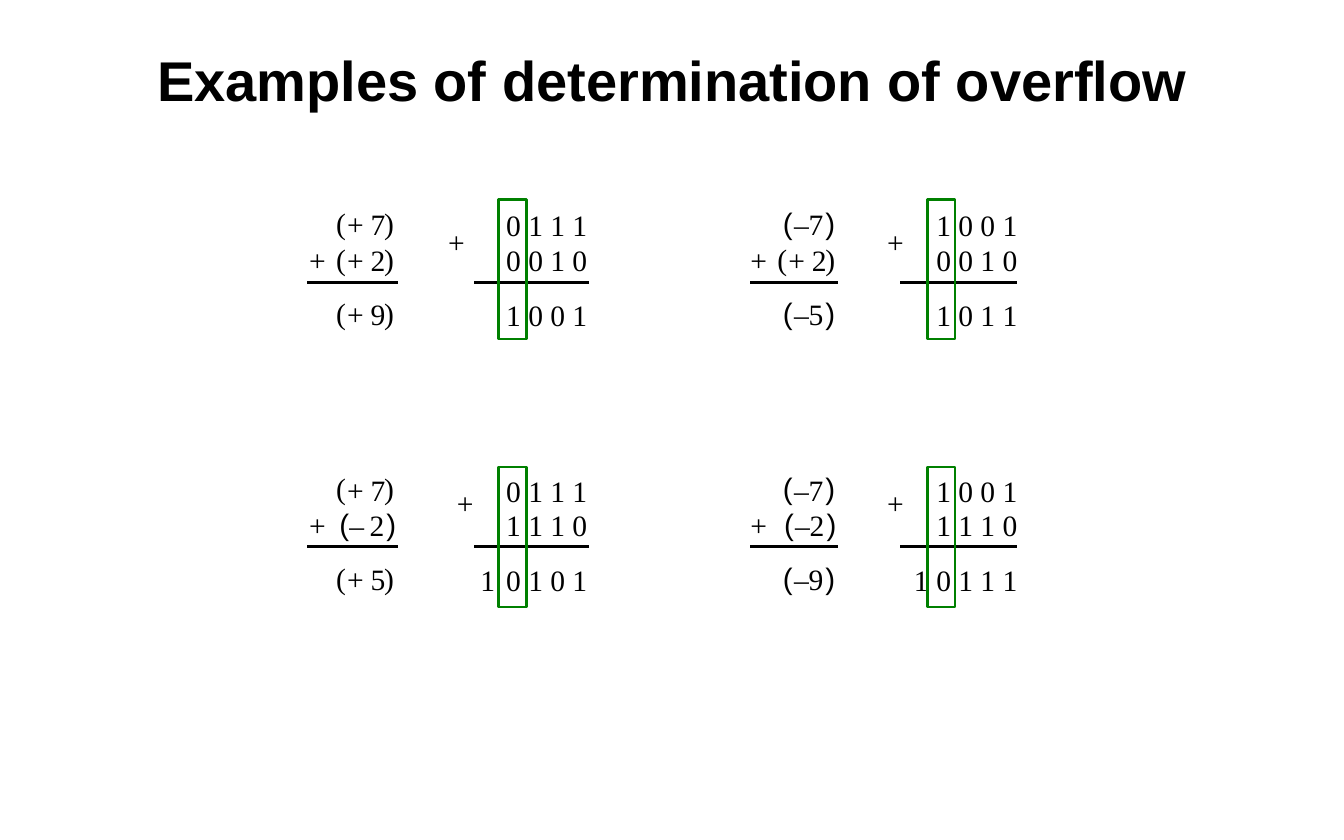
from dataclasses import dataclass

from lxml import etree
from pptx import Presentation
from pptx.dml.color import RGBColor
from pptx.enum.shapes import MSO_CONNECTOR, MSO_SHAPE
from pptx.enum.text import MSO_ANCHOR, MSO_AUTO_SIZE, PP_ALIGN
from pptx.oxml.ns import qn
from pptx.util import Inches, Pt

STRAIGHT = MSO_CONNECTOR.STRAIGHT
RECTANGLE = MSO_SHAPE.RECTANGLE
MIDDLE = MSO_ANCHOR.MIDDLE
NO_FIT = MSO_AUTO_SIZE.NONE
GROW = MSO_AUTO_SIZE.SHAPE_TO_FIT_TEXT
CENTER = PP_ALIGN.CENTER


@dataclass(frozen=True)
class Theme:
    """Colours, fonts and sizes of the slide."""
    ink: RGBColor = RGBColor(0, 0, 0)
    highlight: RGBColor = RGBColor(0, 0x80, 0)
    sans: str = "Arial"
    serif: str = "Times New Roman"
    title_size: float = 36
    number_size: float = 19
    rule_width: float = 1.88
    box_width: float = 1.5


@dataclass(frozen=True)
class Column:
    """Horizontal places shared by the examples of one column."""
    operator: float
    decimal_rule: tuple
    binary_rule: tuple
    carry: float
    box: float
    bits: float


@dataclass(frozen=True)
class Row:
    """Vertical places shared by the examples of one row."""
    decimals: tuple
    bits: tuple
    plus: float
    rule: float
    box: float


@dataclass(frozen=True)
class Example:
    """One addition, with each decimal given as text and left edge."""
    column: Column
    row: Row
    plus: float
    decimals: tuple
    bits: tuple
    carry: str = ""


THEME = Theme()
GLYPH_WIDTHS = {"+": 0.15, "(": 0.09, ")": 0.09}
DIGIT_WIDTH, BITS_WIDTH, TEXT_HEIGHT = 0.13, 0.73, 0.32
BOX_SIZE = (0.25, 1.25)
GLYPH_OFFSETS = {
    "+ ": (0, 0.1, 0.31, 0.43),
    "–": (0, 0.1, 0.23, 0.38),
    "– ": (0, 0.09, 0.27, 0.42),
}
LEFT = Column(2.76, (2.74, 3.55), (4.23, 5.26), 4.29, 4.45, 4.52)
RIGHT = Column(6.7, (6.7, 7.48), (8.04, 9.08), 8.16, 8.28, 8.36)
UPPER = Row((1.84, 2.16, 2.64), (1.85, 2.16, 2.65), 2.0, 2.52, 1.78)
LOWER = Row((4.21, 4.53, 5.01), (4.22, 4.53, 5.02), 4.33, 4.88, 4.17)
EXAMPLES = (
    Example(LEFT, UPPER, 4.0, (("+ 7", 3.0), ("+ 2", 3.0), ("+ 9", 3.0)),
            ("0 1 1 1", "0 0 1 0", "1 0 0 1")),
    Example(RIGHT, UPPER, 7.92, (("–7", 6.99), ("+ 2", 6.94), ("–5", 6.99)),
            ("1 0 0 1", "0 0 1 0", "1 0 1 1")),
    Example(LEFT, LOWER, 4.08, (("+ 7", 3.0), ("– 2", 3.03), ("+ 5", 3.0)),
            ("0 1 1 1", "1 1 1 0", "0 1 0 1"), "1"),
    Example(RIGHT, LOWER, 7.92, (("–7", 6.99), ("–2", 7.0), ("–9", 6.99)),
            ("1 0 0 1", "1 1 1 0", "0 1 1 1"), "1"),
)


def write_text(frame, text, *, size, font, bold=False, align=None):
    """Fill a text frame with one formatted paragraph."""
    paragraph = frame.paragraphs[0]
    paragraph.alignment = align
    run = paragraph.add_run()
    run.text = text
    run.font.size = Pt(size)
    run.font.name = font
    run.font.bold = bold
    run.font.color.rgb = THEME.ink


def add_title(slide, text):
    """Place and format the slide title."""
    title = slide.shapes.title
    title.left, title.top = Inches(1), Inches(0.33)
    title.width, title.height = Inches(10), Inches(0.75)
    title.text_frame.vertical_anchor = MIDDLE
    title.text_frame.auto_size = NO_FIT
    write_text(title.text_frame, text, size=THEME.title_size,
               font=THEME.sans, bold=True, align=CENTER)


def add_label(slide, text, left, top, width=None, font=THEME.serif):
    """Add a tight text box holding a symbol or a row of bits."""
    width = width or GLYPH_WIDTHS.get(text, DIGIT_WIDTH)
    label = slide.shapes.add_textbox(
        Inches(left), Inches(top), Inches(width), Inches(TEXT_HEIGHT))
    frame = label.text_frame
    frame.margin_left = frame.margin_right = 0
    frame.margin_top = frame.margin_bottom = 0
    frame.word_wrap = False
    frame.auto_size = GROW
    write_text(frame, text, size=THEME.number_size, font=font)


def add_decimal(slide, text, left, top):
    """Add a signed digit in parentheses, one label per symbol."""
    spacing, digit = text[:-1], text[-1]
    sign = spacing.strip()
    parenthesis_font = THEME.serif if sign == "+" else THEME.sans
    for symbol, offset in zip(("(", sign, digit, ")"), GLYPH_OFFSETS[spacing]):
        if symbol in "()":
            add_label(slide, symbol, left + offset, top - 0.01,
                      font=parenthesis_font)
        else:
            add_label(slide, symbol, left + offset, top)


def add_rule(slide, span, top):
    """Add the horizontal line above a sum."""
    start, end = span
    rule = slide.shapes.add_connector(
        STRAIGHT, Inches(end), Inches(top), Inches(start), Inches(top))
    rule.line.color.rgb = THEME.ink
    rule.line.width = Pt(THEME.rule_width)
    etree.SubElement(rule._element.spPr, qn("a:effectLst"))


def add_sign_box(slide, left, top):
    """Outline the column of sign bits."""
    width, height = BOX_SIZE
    box = slide.shapes.add_shape(
        RECTANGLE, Inches(left), Inches(top), Inches(width), Inches(height))
    box.shadow.inherit = False
    box.fill.background()
    box.line.color.rgb = THEME.highlight
    box.line.width = Pt(THEME.box_width)


def add_example(slide, example):
    """Add one addition in decimal and binary form."""
    column, row = example.column, example.row
    for (text, left), top in zip(example.decimals, row.decimals):
        add_decimal(slide, text, left, top)
    for bits, top in zip(example.bits, row.bits):
        add_label(slide, bits, column.bits, top, BITS_WIDTH)
    add_label(slide, "+", column.operator, row.decimals[1])
    add_label(slide, "+", example.plus, row.plus)
    if example.carry:
        add_label(slide, example.carry, column.carry, row.bits[-1])
    for span in (column.decimal_rule, column.binary_rule):
        add_rule(slide, span, row.rule)
    add_sign_box(slide, column.box, row.box)


def main():
    """Build and save the slide."""
    presentation = Presentation()
    presentation.slide_width = Inches(12)
    presentation.slide_height = Inches(7.5)
    slide = presentation.slides.add_slide(presentation.slide_layouts[5])
    add_title(slide, "Examples of determination of overflow")
    for example in EXAMPLES:
        add_example(slide, example)
    presentation.save("out.pptx")


if __name__ == "__main__":
    main()
